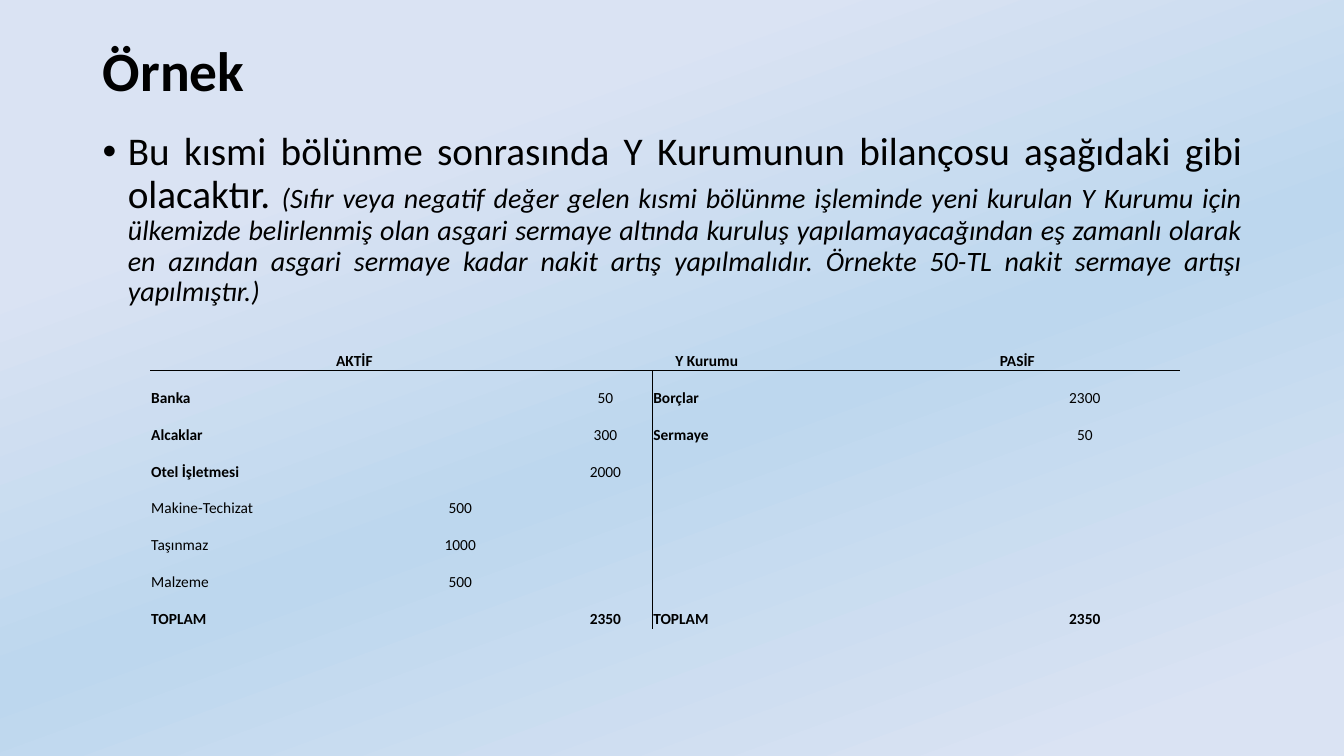
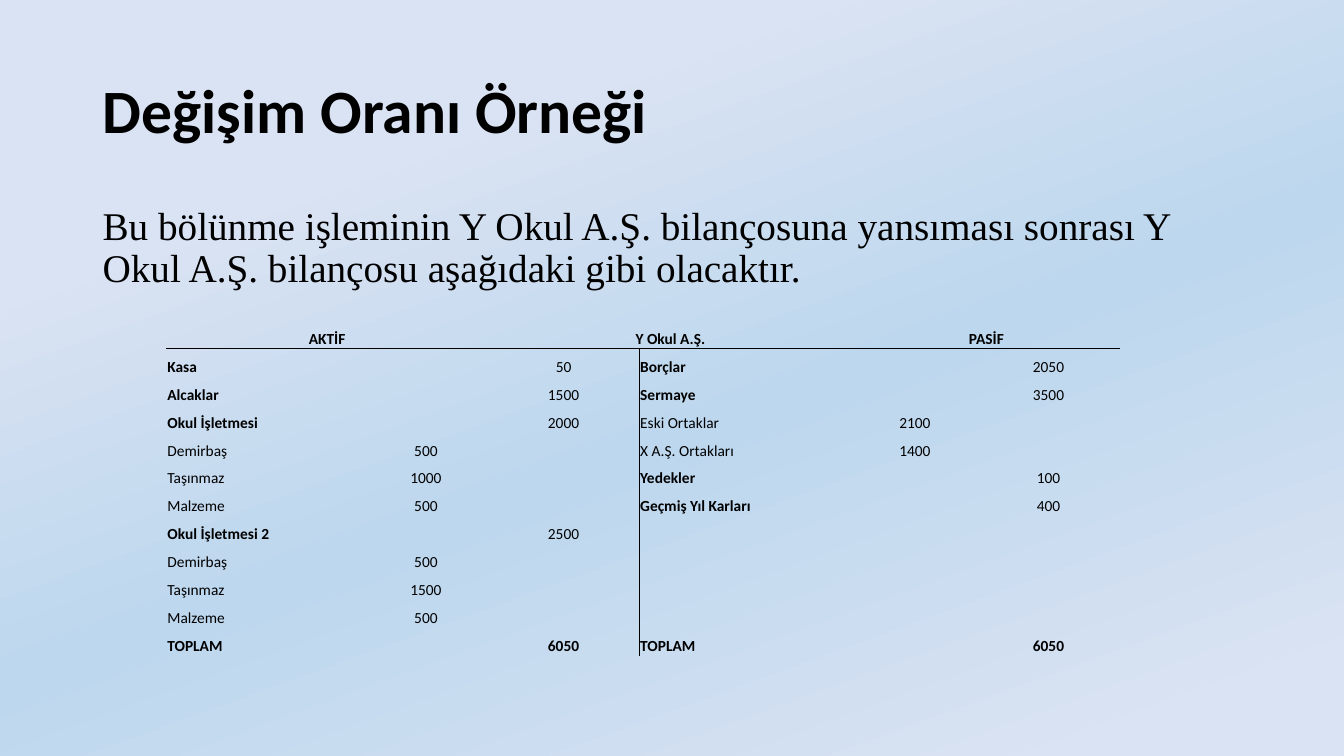
from copy import deepcopy
from dataclasses import dataclass
from enum import Enum
from itertools import zip_longest

from lxml.etree import SubElement
from pptx import Presentation
from pptx.dml.color import RGBColor
from pptx.enum.text import MSO_ANCHOR as Anchor, MSO_AUTO_SIZE as AutoSize, PP_ALIGN as Align
from pptx.oxml.ns import qn
from pptx.util import Inches, Pt

# Shared style
BLACK = RGBColor(0x00, 0x00, 0x00)
PALE_BLUE = RGBColor(0xDA, 0xE3, 0xF3)
SKY_BLUE = RGBColor(0xBD, 0xD7, 0xEE)
BACKGROUND_STOPS = ((0.23, PALE_BLUE), (0.55, SKY_BLUE), (0.93, PALE_BLUE))
BACKGROUND_ANGLE = 290  # counter-clockwise
SANS, SERIF = "Calibri", "Times New Roman"
TEXT_LEFT, TEXT_WIDTH, TITLE_TOP = 0.92, 11.5, 0.4
TABLE_SIZE = 11
RULE_WIDTH = Pt(0.5)
TITLE_ONLY_LAYOUT = 5
SIDE_COLUMNS = 3  # label, detail amount, main amount


class Kind(Enum):
    MAIN = "main"
    DETAIL = "detail"
    TOTAL = "total"


@dataclass(frozen=True)
class Entry:
    label: str
    amount: int
    kind: Kind = Kind.MAIN


@dataclass(frozen=True)
class Balance:
    name: str
    left: float
    top: float
    height: float
    columns: tuple[float, ...]
    assets: tuple[Entry, ...]
    liabilities: tuple[Entry, ...]
    total: int


@dataclass(frozen=True)
class Phrase:
    text: str
    size: float = 28
    font: str = SANS
    italic: bool = False


@dataclass(frozen=True)
class Page:
    title: str
    title_size: float
    title_height: float
    body_top: float
    body_height: float
    phrases: tuple[Phrase, ...]
    balance: Balance
    bulleted: bool = False


def detail(label: str, amount: int) -> Entry:
    return Entry(label, amount, Kind.DETAIL)


PAGES = (
    Page(
        "Örnek", 39.6, 0.65, 1.26, 1.9,
        (
            Phrase("Bu kısmi bölünme sonrasında Y Kurumunun bilançosu aşağıdaki gibi olacaktır. "),
            Phrase(
                "(Sıfır veya negatif değer gelen kısmi bölünme işleminde yeni kurulan Y Kurumu "
                "için ülkemizde belirlenmiş olan asgari sermaye altında kuruluş "
                "yapılamayacağından eş zamanlı olarak en azından asgari sermaye kadar nakit "
                "artış yapılmalıdır. Örnekte 50-TL nakit sermaye artışı yapılmıştır.)",
                size=20, italic=True,
            ),
        ),
        Balance(
            "Y Kurumu", 1.49, 3.31, 2.93, (2.1, 1.95, 0.93, 2.01, 1.34, 1.88),
            assets=(
                Entry("Banka", 50), Entry("Alcaklar", 300), Entry("Otel İşletmesi", 2000),
                detail("Makine-Techizat", 500), detail("Taşınmaz", 1000), detail("Malzeme", 500),
            ),
            liabilities=(Entry("Borçlar", 2300), Entry("Sermaye", 50)),
            total=2350,
        ),
        bulleted=True,
    ),
    Page(
        "Değişim Oranı Örneği", 44, 1.45, 2, 1,
        (
            Phrase(
                "Bu bölünme işleminin Y Okul A.Ş. bilançosuna yansıması sonrası "
                "Y Okul A.Ş. bilançosu aşağıdaki gibi olacaktır.",
                font=SERIF,
            ),
        ),
        Balance(
            "Y Okul A.Ş.", 1.65, 3.18, 3.33, (1.96, 1.23, 1.5, 2.12, 1.23, 1.42),
            assets=(
                Entry("Kasa", 50), Entry("Alcaklar", 1500), Entry("Okul İşletmesi", 2000),
                detail("Demirbaş", 500), detail("Taşınmaz", 1000), detail("Malzeme", 500),
                Entry("Okul İşletmesi 2", 2500),
                detail("Demirbaş", 500), detail("Taşınmaz", 1500), detail("Malzeme", 500),
            ),
            liabilities=(
                Entry("Borçlar", 2050), Entry("Sermaye", 3500),
                detail("Eski Ortaklar", 2100), detail("X A.Ş. Ortakları", 1400),
                Entry("Yedekler", 100), Entry("Geçmiş Yıl Karları", 400),
            ),
            total=6050,
        ),
    ),
)


def write(paragraph, text: str, *, size: float, font: str = SANS, bold: bool = False,
          italic: bool = False, align: Align = Align.LEFT) -> None:
    """Add a formatted run to a paragraph."""
    paragraph.alignment = align
    run = paragraph.add_run()
    run.text = text
    run.font.size, run.font.name = Pt(size), font
    run.font.bold, run.font.italic = bold, italic
    run.font.color.rgb = BLACK


def set_background(presentation) -> None:
    """Give the slide master a diagonal three-stop gradient."""
    master = presentation.slide_master
    fill = master.background.fill
    fill.gradient()
    fill.gradient_angle = BACKGROUND_ANGLE
    stop_list = master.element.find(".//" + qn("a:gsLst"))
    stop_list.append(deepcopy(stop_list[0]))
    for stop, (position, color) in zip(fill.gradient_stops, BACKGROUND_STOPS):
        stop.position = position
        stop.color.rgb = color


def add_title(slide, page: Page) -> None:
    title = slide.shapes.title
    title.left, title.top = Inches(TEXT_LEFT), Inches(TITLE_TOP)
    title.width, title.height = Inches(TEXT_WIDTH), Inches(page.title_height)
    frame = title.text_frame
    frame.auto_size, frame.vertical_anchor = AutoSize.NONE, Anchor.MIDDLE
    paragraph = frame.paragraphs[0]
    paragraph.line_spacing = 0.9
    write(paragraph, page.title, size=page.title_size, bold=True)


def add_body(slide, page: Page) -> None:
    box = slide.shapes.add_textbox(Inches(TEXT_LEFT), Inches(page.body_top),
                                   Inches(TEXT_WIDTH), Inches(page.body_height))
    box.text_frame.word_wrap = True
    paragraph = box.text_frame.paragraphs[0]
    paragraph.line_spacing, paragraph.space_before = 0.9, Pt(10)
    align = Align.JUSTIFY if page.bulleted else Align.LEFT
    for phrase in page.phrases:
        write(paragraph, phrase.text, size=phrase.size, font=phrase.font,
              italic=phrase.italic, align=align)
    if page.bulleted:
        properties = paragraph._p.get_or_add_pPr()
        properties.set("marL", str(Inches(0.25)))
        properties.set("indent", str(-Inches(0.25)))
        SubElement(properties, qn("a:buFont"), typeface="Arial")
        SubElement(properties, qn("a:buChar"), char="•")


def set_borders(cell, ruled_sides: str) -> None:
    """Rule the sides named by the letters L, R, T, B; clear the others."""
    properties = cell._tc.get_or_add_tcPr()
    for side in "LRTB":
        line = SubElement(properties, qn(f"a:ln{side}"), w=str(RULE_WIDTH))
        if side in ruled_sides:
            fill = SubElement(line, qn("a:solidFill"))
            SubElement(fill, qn("a:srgbClr"), val=str(BLACK))
        else:
            SubElement(line, qn("a:noFill"))


def format_cell(cell, row: int, column: int) -> None:
    """Apply the T-account rules, margins and an 11 pt height to a cell."""
    sides = {0: "B", 1: "T"}.get(row, "")
    if row > 0:
        sides += {SIDE_COLUMNS - 1: "R", SIDE_COLUMNS: "L"}.get(column, "")
    set_borders(cell, sides)
    cell.fill.background()
    cell.vertical_anchor = Anchor.BOTTOM
    cell.margin_left = cell.margin_right = cell.margin_top = Inches(0.01)
    cell.margin_bottom = 0
    SubElement(cell.text_frame.paragraphs[0]._p, qn("a:endParaRPr"), sz=str(TABLE_SIZE * 100))


def write_entry(table, row: int, first_column: int, entry: Entry) -> None:
    amount_column = first_column + (1 if entry.kind is Kind.DETAIL else 2)
    write(table.cell(row, first_column).text_frame.paragraphs[0], entry.label,
          size=TABLE_SIZE, bold=entry.kind is not Kind.DETAIL)
    write(table.cell(row, amount_column).text_frame.paragraphs[0], str(entry.amount),
          size=TABLE_SIZE, bold=entry.kind is Kind.TOTAL, align=Align.CENTER)


def add_balance(slide, balance: Balance) -> None:
    total = Entry("TOPLAM", balance.total, Kind.TOTAL)
    lines = [*zip_longest(balance.assets, balance.liabilities), (total, total)]
    table = slide.shapes.add_table(
        len(lines) + 1, len(balance.columns), Inches(balance.left), Inches(balance.top),
        Inches(sum(balance.columns)), Inches(balance.height)).table
    table.first_row = table.horz_banding = False
    for column, width in zip(table.columns, balance.columns):
        column.width = Inches(width)
    for row in range(len(table.rows)):
        for column in range(len(table.columns)):
            format_cell(table.cell(row, column), row, column)

    # Header: three headings, each over two columns
    for index, heading in enumerate(("AKTİF", balance.name, "PASİF")):
        cell = table.cell(0, 2 * index)
        cell.merge(table.cell(0, 2 * index + 1))
        write(cell.text_frame.paragraphs[0], heading, size=TABLE_SIZE, bold=True,
              align=Align.CENTER)

    # Assets on the left, liabilities on the right
    for row, entries in enumerate(lines, start=1):
        for side, entry in enumerate(entries):
            if entry:
                write_entry(table, row, side * SIDE_COLUMNS, entry)


def main() -> None:
    presentation = Presentation()
    presentation.slide_width, presentation.slide_height = Inches(13.33), Inches(7.5)
    set_background(presentation)
    for page in PAGES:
        slide = presentation.slides.add_slide(presentation.slide_layouts[TITLE_ONLY_LAYOUT])
        add_title(slide, page)
        add_body(slide, page)
        add_balance(slide, page.balance)
    presentation.save("out.pptx")


if __name__ == "__main__":
    main()
